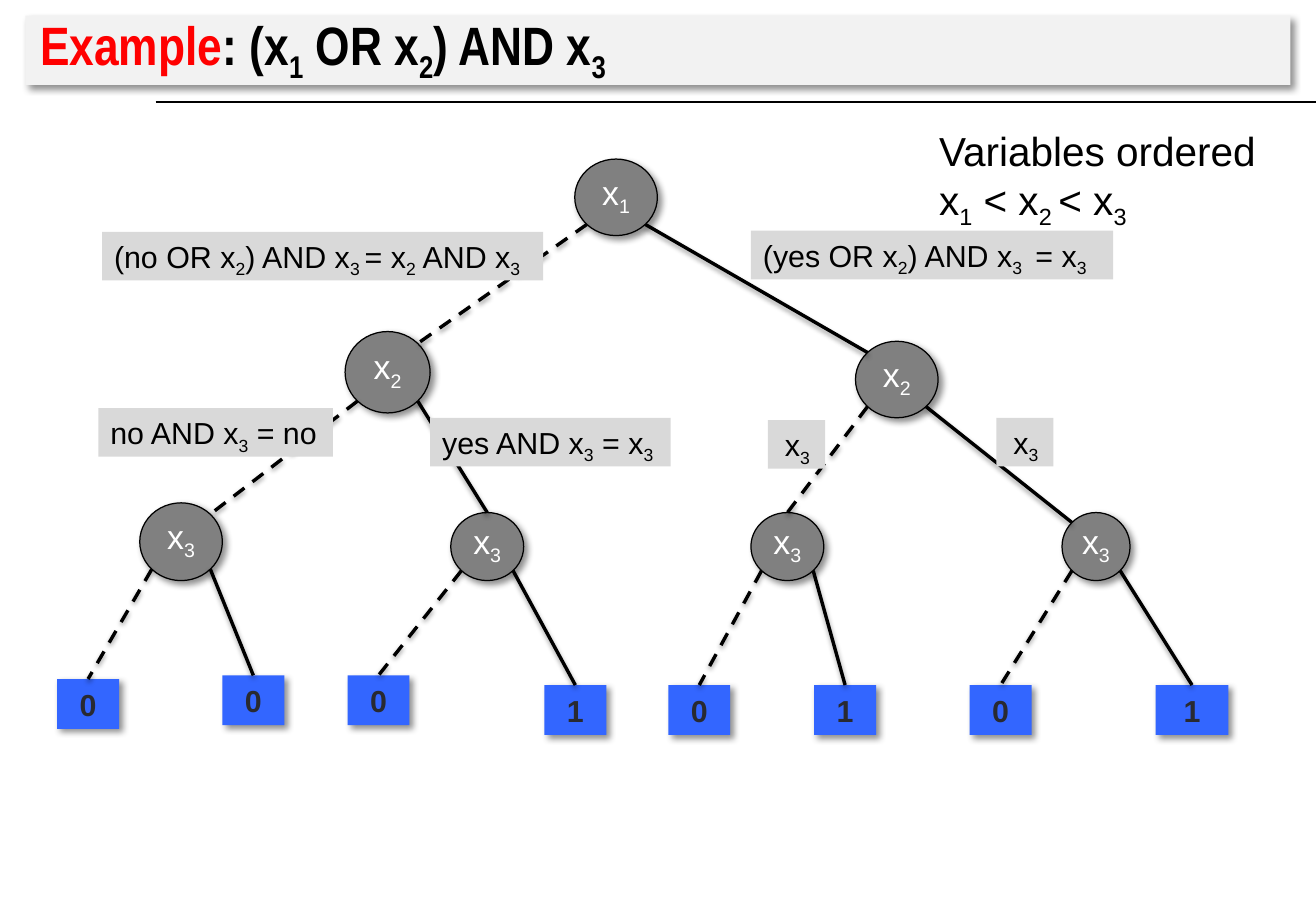
"""Builds a slide with the decision tree of (x1 OR x2) AND x3."""
from pptx import Presentation, util as u
from pptx.dml.color import RGBColor
from pptx.enum import dml, shapes, text
from pptx.oxml import parse_xml
from pptx.oxml.ns import nsdecls, qn

BLACK = RGBColor(0x00, 0x00, 0x00)
WHITE = RGBColor(0xFF, 0xFF, 0xFF)
RED = RGBColor(0xFF, 0x00, 0x00)
BLUE = RGBColor(0x33, 0x66, 0xFF)
INK = RGBColor(0x29, 0x2A, 0x31)
NODE_GRAY = RGBColor(0x80, 0x80, 0x80)
LABEL_GRAY = RGBColor(0xD9, 0xD9, 0xD9)
BAR_GRAY = RGBColor(0xF2, 0xF2, 0xF2)

CELL = u.Inches(0.1)
COLUMNS, ROWS = 108.3, 75
NEAR, FAR = 0.146, 0.854
PANEL_SHADOW = (43, 4, 3, 45)
EDGE_SHADOW = (38, 3.1, 1.6, 90)
CORNER_CHILDREN = (1, 2, 3, 6)

NODES = [
    (47.3, 13.1, 6.8, 6.3),
    (28.4, 27.3, 7, 6.7), (70.4, 28.1, 6.8, 6.3),
    (11.5, 41.4, 6.8, 6.4), (37.1, 42.2, 6, 5.6),
    (61.8, 42.2, 6, 5.6), (87.4, 42.2, 5.6, 5.6),
]
LEAVES = [
    ("0", 4.7, 55.9, 5.1), ("0", 18.3, 55.6, 5.1),
    ("0", 28.6, 55.6, 5.1), ("1", 44.8, 56.4, 5.1),
    ("0", 55, 56.4, 5.1), ("1", 67, 56.4, 5.1),
    ("0", 79.8, 56.4, 5.1), ("1", 95.1, 56.4, 6),
]
LABELS = [
    ("(no OR x|2|) AND x|3 |= x|2| AND x|3", 8.4, 19.1, 36.3, 1),
    ("(yes OR x|2|) AND x|3 | = x|3", 61.8, 19, 29.8, 1),
    ("no AND x|3| = no", 8.1, 33.6, 19.3, 1),
    ("yes AND x|3| = x|3", 35.4, 34.4, 19.8, 1),
    ("x|3", 63.2, 34.6, 4.7, 1.4),
    ("x|3", 82, 34.4, 4.7, 1.4),
]

TITLE_FONT = {"name": "Arial Narrow", "size": u.Pt(32), "bold": True}
NODE_FONT = {"name": "Arial", "size": u.Pt(20)}
LABEL_FONT = {"name": "Arial", "size": u.Pt(18)}
LEAF_FONT = {**LABEL_FONT, "bold": True}
ORDER_FONT = {"name": "Arial", "size": u.Pt(24)}


def grid(*cells):
    """Turn columns and rows into lengths."""
    return [round(cell * CELL) for cell in cells]


def apply_format(target, values):
    """Set every attribute in the dict on the target."""
    for key, value in values.items():
        setattr(target, key, value)


def set_frame(frame, insets, anchor=text.MSO_ANCHOR.TOP, wrap=True):
    """Set the insets, anchor and wrapping of a text frame."""
    sides = ("margin_left", "margin_top", "margin_right", "margin_bottom")
    apply_format(frame, {"vertical_anchor": anchor, "word_wrap": wrap,
                         **dict(zip(sides, grid(*insets)))})


def write(paragraph, marked, font, color, align=text.PP_ALIGN.LEFT):
    """Add runs to a paragraph; every second piece is a subscript."""
    paragraph.alignment = align
    for number, piece in enumerate(marked.split("|")):
        run = paragraph.add_run()
        run.text = piece
        apply_format(run.font, font)
        run.font.color.rgb = color
        if number % 2:
            run.font._element.set("baseline", "-25000")


def set_shadow(element, shadow=None):
    """Replace the theme shadow with the given one, or with none."""
    effects = parse_xml(f"<a:effectLst {nsdecls('a')}/>")
    if shadow:
        alpha, blur, distance, angle = shadow
        effects.append(parse_xml(
            f'<a:outerShdw {nsdecls("a")} blurRad="{u.Pt(blur)}" dist="{u.Pt(distance)}" '
            f'dir="{angle * 60000}" algn="ctr" rotWithShape="0"><a:srgbClr val="000000">'
            f'<a:alpha val="{alpha * 1000}"/></a:srgbClr></a:outerShdw>'))
    element.find(qn("p:spPr")).append(effects)


def add_panel(slide, kind, area, fill, shadow=None, outlined=False):
    """Add a filled shape on the grid."""
    panel = slide.shapes.add_shape(kind, *grid(*area))
    panel.fill.solid()
    panel.fill.fore_color.rgb = fill
    if outlined:
        panel.line.color.rgb = BLACK
        panel.line.width = u.Pt(0.75)
    else:
        panel.line.fill.background()
    set_shadow(panel._element, shadow)
    return panel


def add_line(slide, start, end, width, shadow=None, dashed=False):
    """Add a black straight line between two points."""
    line = slide.shapes.add_connector(shapes.MSO_CONNECTOR.STRAIGHT, *start, *end)
    line.line.color.rgb = BLACK
    line.line.width = u.Pt(width)
    if dashed:
        line.line.dash_style = dml.MSO_LINE.DASH
    set_shadow(line._element, shadow)
    return line


def add_node(slide, index, area):
    """Add a tree node named after the variable of its level."""
    node = add_panel(slide, shapes.MSO_SHAPE.OVAL, area, NODE_GRAY, PANEL_SHADOW, True)
    set_frame(node.text_frame, (0.4, 0, 0.4, 0.5), text.MSO_ANCHOR.MIDDLE, False)
    write(node.text_frame.paragraphs[0], f"x|{(index + 1).bit_length()}",
          NODE_FONT, WHITE, text.PP_ALIGN.CENTER)
    return node


def add_leaf(slide, value, left, top, width):
    """Add a result box."""
    leaf = add_panel(slide, shapes.MSO_SHAPE.RECTANGLE, (left, top, width, 4.1),
                     BLUE, PANEL_SHADOW)
    set_frame(leaf.text_frame, (0.8, 0.5, 0.8, 0.5), text.MSO_ANCHOR.MIDDLE)
    write(leaf.text_frame.paragraphs[0], value, LEAF_FONT, INK, text.PP_ALIGN.CENTER)
    return leaf


def point_on(shape, across, down):
    """Find a point of a shape from shares of its width and height."""
    return round(shape.left + across * shape.width), round(shape.top + down * shape.height)


def add_edge(slide, tree, child):
    """Join a node to its parent: dashed for no, solid for yes."""
    is_no = child % 2 == 1
    at_corner = child in CORNER_CHILDREN
    start = point_on(tree[(child - 1) // 2], NEAR if is_no else FAR, FAR)
    corner = point_on(tree[child], FAR if is_no else NEAR, NEAR)
    end = corner if at_corner else point_on(tree[child], 0.5, 0)
    edge = add_line(slide, start, end, 2, EDGE_SHADOW, is_no)
    if not at_corner:
        edge.end_connect(tree[child], 0)


def add_label(slide, marked, left, top, width, inset):
    """Add the formula that remains along an edge."""
    label = add_panel(slide, shapes.MSO_SHAPE.RECTANGLE, (left, top, width, 4), LABEL_GRAY)
    set_frame(label.text_frame, (inset, 0.5, 0, 0.5))
    write(label.text_frame.paragraphs[0], marked, LABEL_FONT, BLACK)


def add_title(slide):
    """Add the title bar and the rule below it."""
    add_line(slide, grid(12.8, 8.4), grid(COLUMNS, 8.4), 1)
    bar = add_panel(slide, shapes.MSO_SHAPE.RECTANGLE, (2.1, 1.3, 104.1, 5.7),
                    BAR_GRAY, PANEL_SHADOW)
    set_frame(bar.text_frame, (1.2, 0.5, 1, 0), text.MSO_ANCHOR.BOTTOM)
    heading = bar.text_frame.paragraphs[0]
    write(heading, "Example", TITLE_FONT, RED)
    write(heading, ": (x|1| OR x|2|) AND x|3", TITLE_FONT, BLACK)


def add_order(slide):
    """Add the note on the order of the variables."""
    frame = slide.shapes.add_textbox(*grid(76.3, 9.9, 28.3, 9.1)).text_frame
    set_frame(frame, (1, 0.5, 0, 0.5))
    write(frame.paragraphs[0], "Variables ordered", ORDER_FONT, BLACK)
    write(frame.add_paragraph(), "x|1| < x|2 |< x|3", ORDER_FONT, BLACK)


def main():
    """Build and save the slide."""
    deck = Presentation()
    deck.slide_width, deck.slide_height = grid(COLUMNS, ROWS)
    slide = deck.slides.add_slide(deck.slide_layouts[6])
    add_title(slide)
    tree = [add_node(slide, index, area) for index, area in enumerate(NODES)]
    tree += [add_leaf(slide, *leaf) for leaf in LEAVES]
    for child in range(1, len(tree)):
        add_edge(slide, tree, child)
    add_order(slide)
    for label in LABELS:
        add_label(slide, *label)
    deck.save("out.pptx")


if __name__ == "__main__":
    main()
